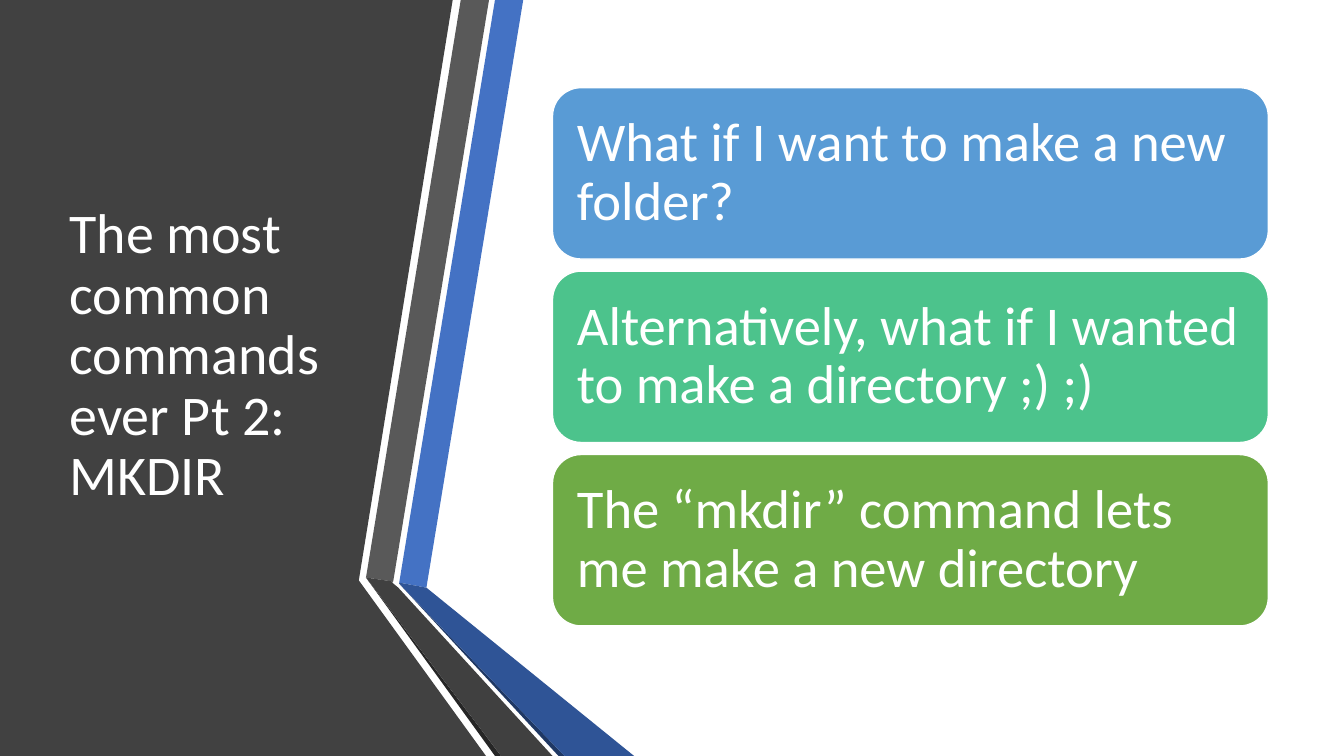
"""Builds the MKDIR slide: a title on a dark folded panel beside three stacked cards."""
from pptx import Presentation
from pptx import util as u
from pptx.dml.color import RGBColor
from pptx.enum import shapes, text

PX = 9144


def paint(fill, color):
    fill.solid()
    fill.fore_color.rgb = RGBColor.from_string(color)


def write(sp, content, size, inset_x, inset_y):
    tf = sp.text_frame
    tf.text = content
    tf.word_wrap = True
    tf.auto_size = text.MSO_AUTO_SIZE.NONE
    tf.vertical_anchor = text.MSO_ANCHOR.MIDDLE
    tf.margin_left = tf.margin_right = inset_x * PX
    tf.margin_top = tf.margin_bottom = inset_y * PX
    p = tf.paragraphs[0]
    p.alignment = text.PP_ALIGN.LEFT
    p.line_spacing = 0.9
    p.font.name = "Calibri"
    p.font.size = u.Pt(size)
    paint(p.font.fill, "FFFFFF")


prs = Presentation()
prs.slide_width = 1333 * PX
prs.slide_height = 750 * PX
s = prs.slides.add_slide(prs.slide_layouts[5])
paint(s.background.fill, "FFFFFF")

panels = [
    ("414141", [(0, 0), (449, 0), (356, 575), (356, 576), (482, 750), (0, 750)]),
    ("4472C4", [(396, 578), (423, 583), (519, 0), (491, 0)]),
    ("595959", [(485, 0), (457, 0), (363, 573), (390, 577)]),
    ("262626", [(363, 573), (491, 750), (497, 750)]),
    ("1F3864", [(396, 579), (554, 750), (560, 750)]),
    ("2F5496", [(396, 579), (560, 750), (629, 750), (423, 583), (396, 578)]),
    ("404040", [(548, 750), (395, 583), (389, 578), (390, 577), (363, 573), (497, 750)]),
]
for color, points in panels:
    outline = s.shapes.build_freeform(*points[0], scale=PX)
    outline.add_line_segments(points[1:], close=True)
    sp = outline.convert_to_shape()
    sp.shadow.inherit = False
    paint(sp.fill, color)
    sp.line.fill.background()

title = s.shapes.title
title.left, title.top, title.width, title.height = 59 * PX, 75 * PX, 304 * PX, 558 * PX
write(title, "The most common commands ever Pt 2: MKDIR", 40, 10, 5)
s.shapes._spTree.append(title._element)

cards = [
    ("599BD5", "What if I want to make a new folder?"),
    ("4CC38C", "Alternatively, what if I wanted to make a directory ;) ;)"),
    ("6FAB46", "The “mkdir” command lets me make a new directory"),
]
for i, (color, content) in enumerate(cards):
    sp = s.shapes.add_shape(shapes.MSO_SHAPE.ROUNDED_RECTANGLE,
                            548 * PX, (87 + 182 * i) * PX, 710 * PX, 170 * PX)
    sp.shadow.inherit = False
    paint(sp.fill, color)
    paint(sp.line.fill, "FFFFFF")
    sp.line.width = u.Pt(1)
    write(sp, content, 39, 16, 16)

prs.save("out.pptx")
